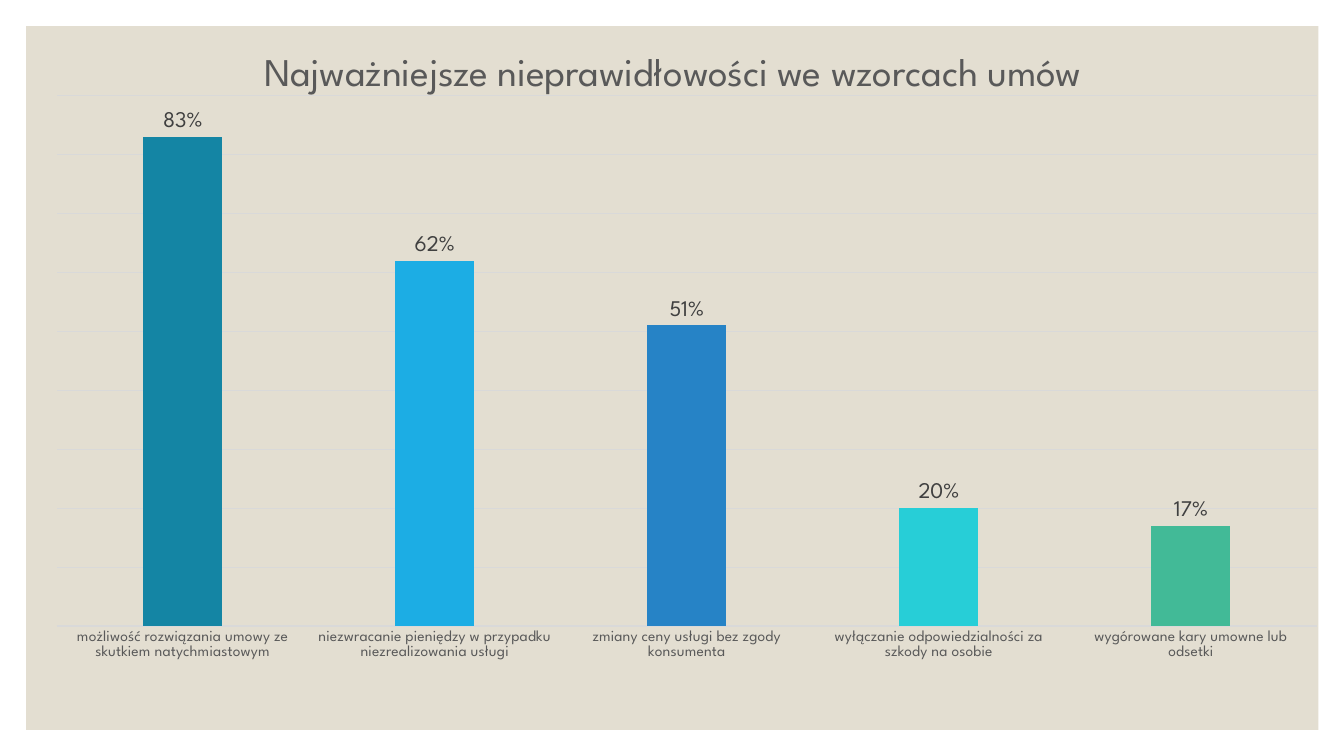
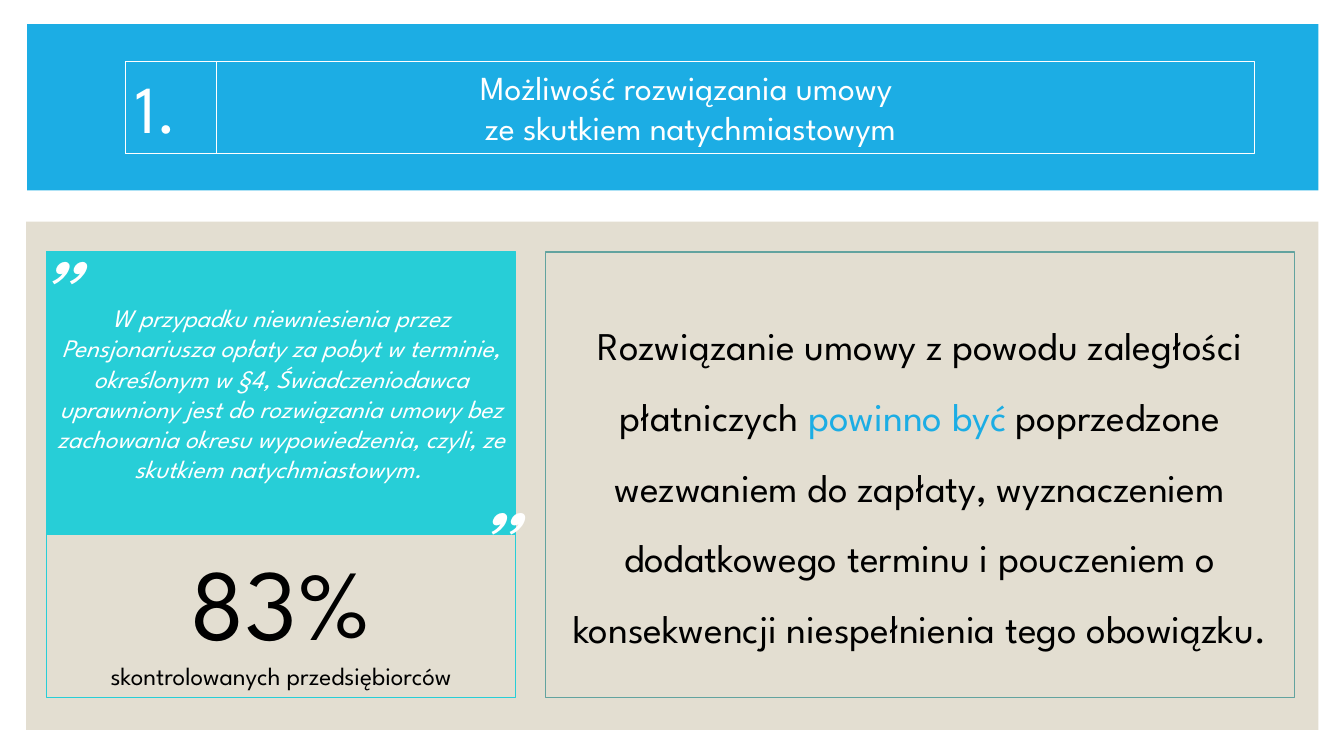
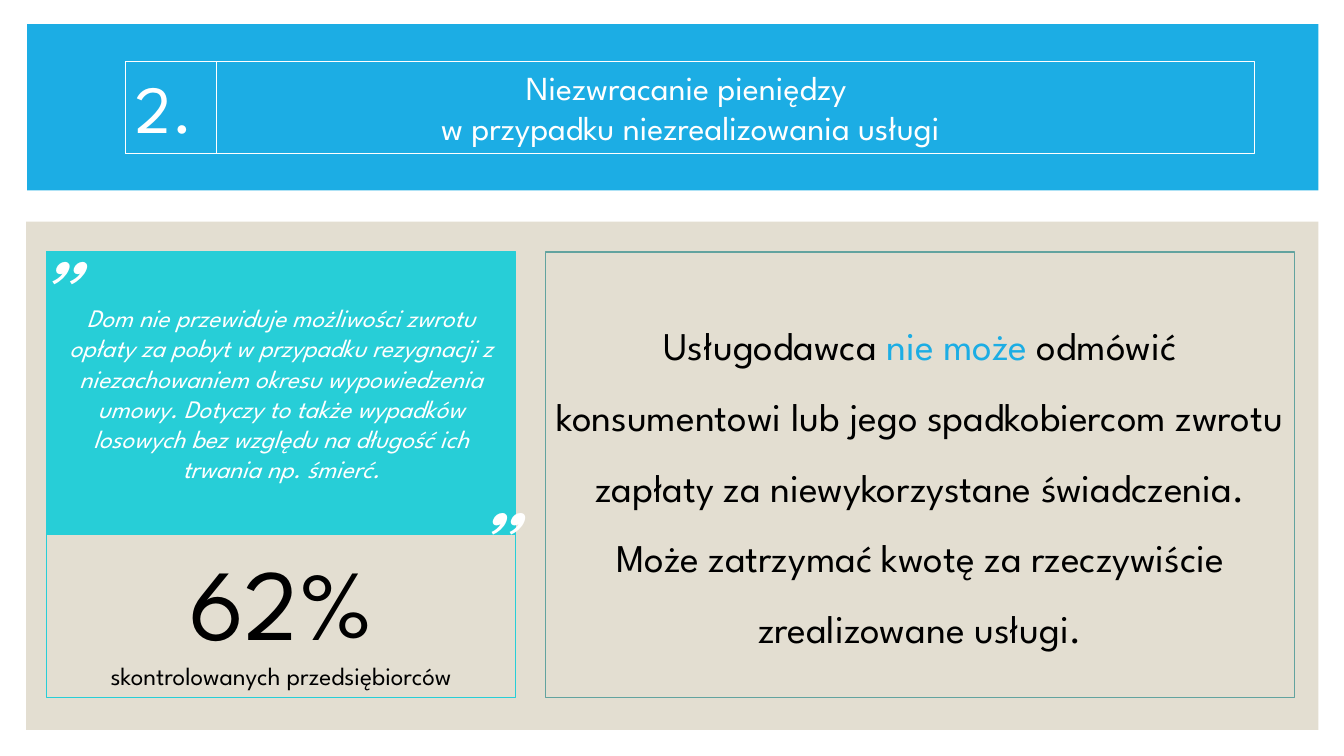
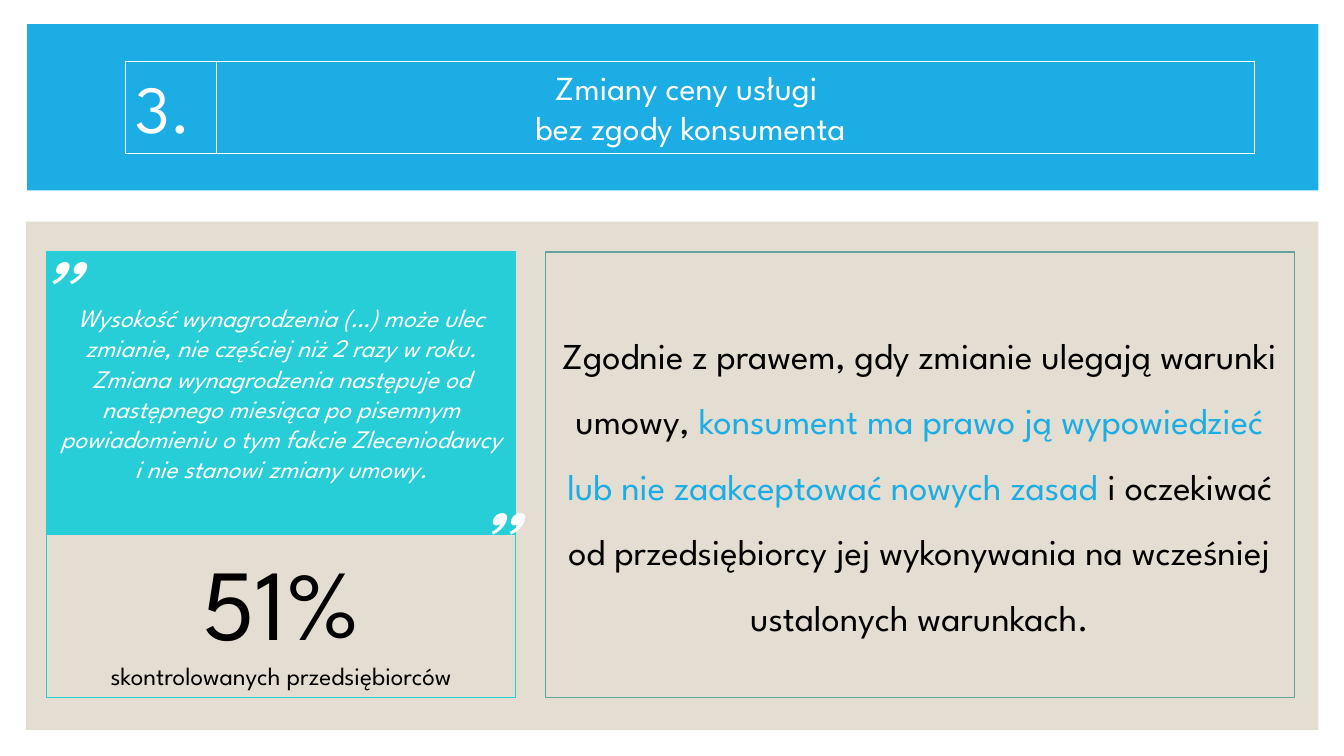
from lxml.etree import SubElement
from pptx import Presentation
from pptx.chart.data import CategoryChartData
from pptx.dml.color import RGBColor
from pptx.enum.chart import XL_CHART_TYPE, XL_LABEL_POSITION, XL_TICK_MARK
from pptx.enum.shapes import MSO_SHAPE
from pptx.enum.text import MSO_ANCHOR, MSO_AUTO_SIZE, PP_ALIGN
from pptx.oxml.ns import qn
from pptx.util import Pt

FONT = "League Spartan"
WHITE, BLACK, SAND = "FFFFFF", "000000", "E3DED1"
BLUE, TURQUOISE, SAGE = "1CADE4", "27CED7", "62A39F"
GREY, DARK_GREY, PALE_GREY = "595959", "404040", "D9D9D9"
BAR_COLORS = ["1485A4", BLUE, "2683C6", TURQUOISE, "42BA97"]

PAGE = (18.7, 18.7, 923, 502.6)
CHART_AREA = (19.4, 20.2, 922.3, 501.8)
PLOT_AREA = {"x": 0.023, "y": 0.096, "w": 0.976, "h": 0.755}
HEADER_BACK = (13.7, 9.4, 941.8, 149)
HEADER_BAND = (19.4, 17.3, 922.3, 118.8)
HEADER_LEFT, HEADER_TOP, HEADER_HEIGHT = 90, 43.9, 65.5
PANEL_LEFT, PANEL_TOP, PANEL_WIDTH = 33.1, 180, 335.5
QUOTE_HEIGHT, SHARE_HEIGHT = 201.6, 116.6
ADVICE_LEFT, ADVICE_WIDTH = 389.5, 535

IRREGULARITIES = [
    ("możliwość rozwiązania umowy ze skutkiem natychmiastowym", 0.83),
    ("niezwracanie pieniędzy w przypadku niezrealizowania usługi", 0.62),
    ("zmiany ceny usługi bez zgody konsumenta", 0.51),
    ("wyłączanie odpowiedzialności za szkody na osobie", 0.2),
    ("wygórowane kary umowne lub odsetki", 0.17),
]

CASES = [
    {
        "title": "Możliwość rozwiązania umowy \vze skutkiem natychmiastowym",
        "share": "83%",
        "quote": "W przypadku niewniesienia przez Pensjonariusza opłaty za pobyt w terminie, "
                 "określonym w §4, Świadczeniodawca uprawniony jest do rozwiązania umowy bez "
                 "zachowania okresu wypowiedzenia, czyli, ze skutkiem natychmiastowym. ",
        "advice": ("Rozwiązanie umowy z powodu zaległości płatniczych ", "powinno być ",
                   "poprzedzone wezwaniem do zapłaty, wyznaczeniem dodatkowego terminu "
                   "i pouczeniem o konsekwencji niespełnienia tego obowiązku."),
        "advice_size": 28,
    },
    {
        "title": "Niezwracanie pieniędzy \vw przypadku niezrealizowania usługi",
        "share": "62%",
        "quote": "Dom nie przewiduje możliwości zwrotu opłaty za pobyt w przypadku rezygnacji "
                 "z niezachowaniem okresu wypowiedzenia umowy. Dotyczy to także wypadków "
                 "losowych bez względu na długość ich trwania np. śmierć.",
        "advice": ("Usługodawca ", "nie może ",
                   "odmówić konsumentowi lub jego spadkobiercom zwrotu zapłaty za "
                   "niewykorzystane świadczenia. Może zatrzymać kwotę za rzeczywiście "
                   "zrealizowane usługi."),
        "advice_size": 28,
    },
    {
        "title": "Zmiany ceny usługi \vbez zgody konsumenta",
        "share": "51%",
        "quote": "Wysokość wynagrodzenia (…) może ulec zmianie, nie częściej niż 2 razy w roku. "
                 "Zmiana wynagrodzenia następuje od następnego miesiąca po pisemnym "
                 "powiadomieniu o tym fakcie Zleceniodawcy i nie stanowi zmiany umowy.",
        "advice": ("Zgodnie z prawem, gdy zmianie ulegają warunki umowy, ",
                   "konsument ma prawo ją wypowiedzieć lub nie zaakceptować nowych zasad",
                   " i oczekiwać od przedsiębiorcy jej wykonywania na wcześniej ustalonych "
                   "warunkach."),
        "advice_size": 26,
    },
]


def rgb(value):
    return RGBColor.from_string(value)


class Deck:
    """Holds the shared style and the slide being built."""

    def __init__(self):
        self.presentation = Presentation()
        self.presentation.slide_width = Pt(960)
        self.presentation.slide_height = Pt(540)
        self.slide = None

    def new_slide(self):
        self.slide = self.presentation.slides.add_slide(self.presentation.slide_layouts[6])
        self.rectangle(PAGE, fill=SAND)

    def rectangle(self, area, fill=None, line=None):
        shape = self.slide.shapes.add_shape(MSO_SHAPE.RECTANGLE, *map(Pt, area))
        shape.shadow.inherit = False
        if fill:
            shape.fill.solid()
            shape.fill.fore_color.rgb = rgb(fill)
        else:
            shape.fill.background()
        if line:
            shape.line.color.rgb = rgb(line)
            shape.line.width = Pt(0.75)
        else:
            shape.line.fill.background()
        return shape

    def style(self, font, size, color, italic=False):
        font.name = FONT
        font.size = Pt(size)
        font.color.rgb = rgb(color)
        font.italic = italic
        font.bold = False

    def put_text(self, shape, text, size, color, align=PP_ALIGN.CENTER,
                 anchor=MSO_ANCHOR.TOP, italic=False, wrap=True):
        frame = shape.text_frame
        frame.text = text
        frame.word_wrap = wrap
        frame.vertical_anchor = anchor
        frame.auto_size = (MSO_AUTO_SIZE.SHAPE_TO_FIT_TEXT if anchor == MSO_ANCHOR.TOP
                           else MSO_AUTO_SIZE.NONE)
        for paragraph in frame.paragraphs:
            paragraph.alignment = align
            for run in paragraph.runs:
                self.style(run.font, size, color, italic)
        return frame

    def header(self, number, title):
        self.rectangle(HEADER_BACK, fill=WHITE)
        self.rectangle(HEADER_BAND, fill=BLUE)
        title_frame = self.rectangle((HEADER_LEFT, HEADER_TOP, 806.4, HEADER_HEIGHT), line=WHITE)
        self.put_text(title_frame, title, 24, WHITE)
        number_frame = self.rectangle((HEADER_LEFT, HEADER_TOP, 64.8, HEADER_HEIGHT), line=WHITE)
        self.put_text(number_frame, f"{number}.", 48, WHITE, PP_ALIGN.LEFT)

    def share(self, percentage):
        panel = self.rectangle((PANEL_LEFT, PANEL_TOP + QUOTE_HEIGHT, PANEL_WIDTH, SHARE_HEIGHT),
                               line=TURQUOISE)
        frame = self.put_text(panel, f"{percentage}\nskontrolowanych przedsiębiorców", 18, BLACK)
        frame.paragraphs[0].runs[0].font.size = Pt(72)

    def quote(self, text):
        panel = self.rectangle((PANEL_LEFT, PANEL_TOP, PANEL_WIDTH, QUOTE_HEIGHT),
                               fill=TURQUOISE, line=TURQUOISE)
        self.put_text(panel, text, 18, WHITE, anchor=MSO_ANCHOR.MIDDLE, italic=True)

    def quote_mark(self, mark, area, align):
        box = self.slide.shapes.add_textbox(*map(Pt, area))
        self.put_text(box, mark, 66, WHITE, align, italic=True, wrap=False)

    def advice(self, parts, size):
        panel = self.rectangle((ADVICE_LEFT, PANEL_TOP, ADVICE_WIDTH, QUOTE_HEIGHT + SHARE_HEIGHT),
                               line=SAGE)
        opening, key_phrase, ending = parts
        frame = self.put_text(panel, opening, size, BLACK, anchor=MSO_ANCHOR.MIDDLE)
        paragraph = frame.paragraphs[0]
        paragraph.line_spacing = 1.5
        paragraph.space_after = Pt(6)
        for text, color in ((key_phrase, BLUE), (ending, BLACK)):
            run = paragraph.add_run()
            run.text = text
            self.style(run.font, size, color)

    def place_plot(self, chart):
        plot_area = chart.element.chart.plotArea
        for old_layout in plot_area.findall(qn("c:layout")):
            plot_area.remove(old_layout)
        layout = plot_area.makeelement(qn("c:layout"))
        plot_area.insert(0, layout)
        manual = SubElement(layout, qn("c:manualLayout"))
        settings = {"layoutTarget": "inner", "xMode": "edge", "yMode": "edge", **PLOT_AREA}
        for tag, value in settings.items():
            SubElement(manual, qn(f"c:{tag}")).set("val", str(value))

    def column_chart(self, title, rows):
        data = CategoryChartData(number_format="0%")
        data.categories = [category for category, _ in rows]
        data.add_series("Series 1", [value for _, value in rows])
        chart = self.slide.shapes.add_chart(
            XL_CHART_TYPE.COLUMN_CLUSTERED, *map(Pt, CHART_AREA), data).chart
        self.style(chart.font, 10, BLACK)
        chart.has_legend = False
        chart.has_title = True
        heading = chart.chart_title.text_frame
        heading.text = title
        self.style(heading.paragraphs[0].runs[0].font, 28, GREY)

        categories = chart.category_axis
        categories.major_tick_mark = XL_TICK_MARK.NONE
        self.style(categories.tick_labels.font, 11, GREY)
        values = chart.value_axis
        values.visible = False
        values.minimum_scale, values.maximum_scale, values.major_unit = 0, 0.9, 0.1
        values.has_major_gridlines = True
        for line in (categories.format.line, values.major_gridlines.format.line):
            line.color.rgb = rgb(PALE_GREY)
            line.width = Pt(0.75)

        plot = chart.plots[0]
        plot.vary_by_categories = False
        plot.gap_width, plot.overlap = 219, -27
        plot.has_data_labels = True
        labels = plot.data_labels
        labels.show_value = True
        labels.number_format, labels.number_format_is_linked = "0%", False
        labels.position = XL_LABEL_POSITION.OUTSIDE_END
        self.style(labels.font, 16, DARK_GREY)
        for index, color in enumerate(BAR_COLORS):
            fill = plot.series[0].points[index].format.fill
            fill.solid()
            fill.fore_color.rgb = rgb(color)
        self.place_plot(chart)


def main():
    deck = Deck()
    deck.new_slide()
    deck.column_chart("Najważniejsze nieprawidłowości we wzorcach umów", IRREGULARITIES)
    for number, case in enumerate(CASES, 1):
        deck.new_slide()
        deck.header(number, case["title"])
        deck.share(case["share"])
        deck.quote(case["quote"])
        deck.advice(case["advice"], case["advice_size"])
        deck.quote_mark("”", (328.3, 339.8, 46.8, 87.1), PP_ALIGN.CENTER)
        deck.quote_mark("„", (28.8, 126, 48.2, 87.1), PP_ALIGN.LEFT)
    deck.presentation.save("out.pptx")


if __name__ == "__main__":
    main()
